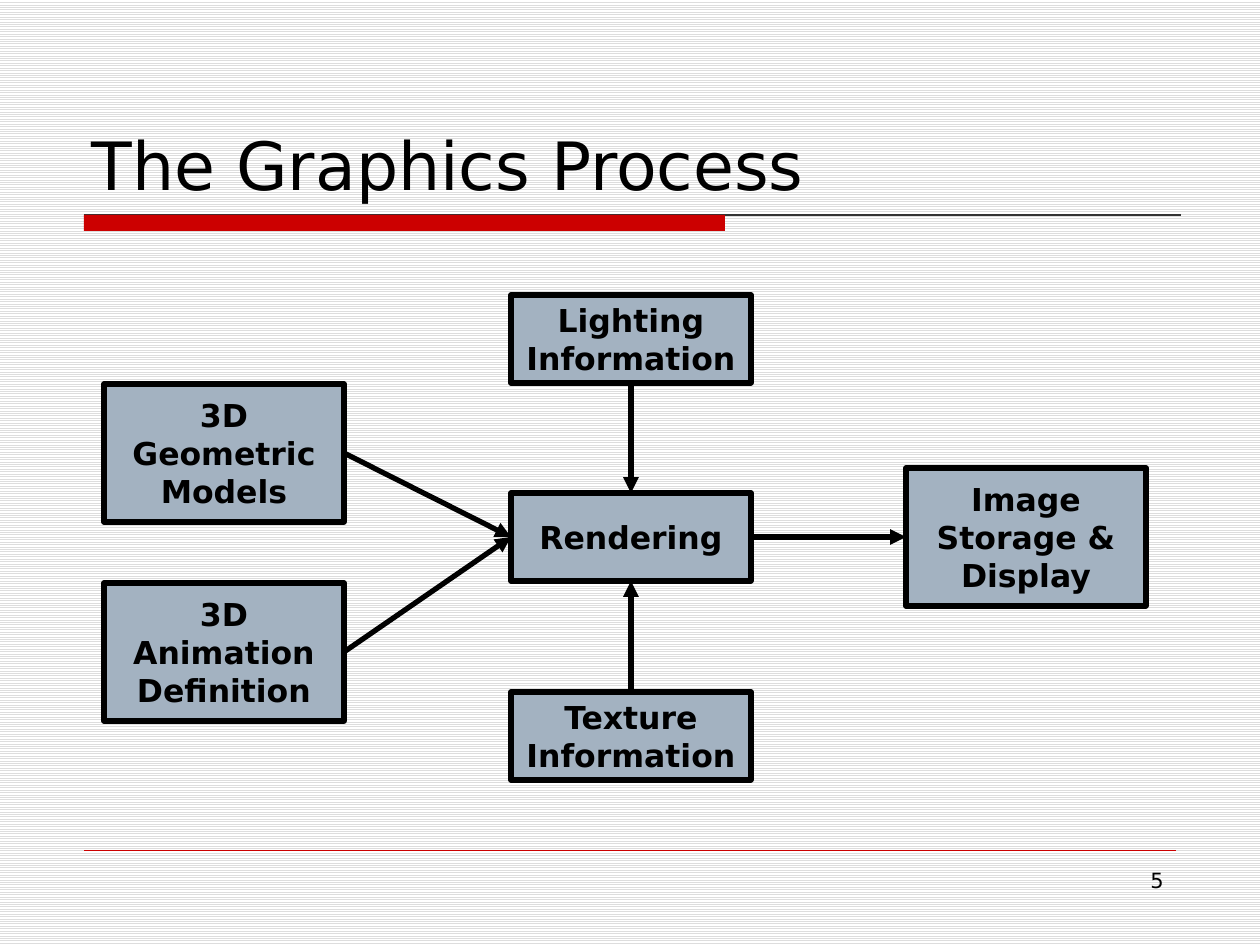
from dataclasses import dataclass

from lxml.etree import SubElement
from pptx import Presentation
from pptx.dml.color import RGBColor
from pptx.enum.dml import MSO_PATTERN
from pptx.enum.shapes import MSO_CONNECTOR, MSO_SHAPE
from pptx.enum.text import MSO_ANCHOR, PP_ALIGN
from pptx.oxml.ns import qn
from pptx.shapes.autoshape import Shape
from pptx.shapes.connector import Connector
from pptx.slide import Slide
from pptx.text.text import TextFrame
from pptx.util import Emu, Pt

PX = 914400 / 126  # EMU per px
FONT = "DejaVu Sans"
COLORS = {
    "ink": "000000",
    "box": "A3B2C1",
    "accent": "CC0000",
    "rule": "333333",
    "stripe": "DDDDDD",
    "paper": "FFFFFF",
}
TOP, LEFT, BOTTOM, RIGHT = range(4)  # connection sites of a rectangle
BOX_WIDTH = 240


@dataclass
class Stage:
    label: str
    left: int
    top: int
    height: int


@dataclass
class Flow:
    source: str
    source_side: int
    target_side: int


# "\n" starts a paragraph, "\v" breaks a line within one
STAGES = {
    "lighting": Stage("Lighting\nInformation", 511, 295, 88),
    "texture": Stage("Texture\nInformation", 511, 692, 88),
    "rendering": Stage("Rendering", 511, 493, 88),
    "output": Stage("Image\vStorage &\vDisplay", 906, 468, 138),
    "models": Stage("3D\vGeometric\vModels", 104, 384, 138),
    "animation": Stage("3D\vAnimation\vDefinition", 104, 583, 138),
}
INPUTS = [
    Flow("lighting", BOTTOM, TOP),
    Flow("texture", TOP, BOTTOM),
    Flow("models", RIGHT, LEFT),
    Flow("animation", RIGHT, LEFT),
]


def px(value: int) -> Emu:
    return Emu(round(value * PX))


def color(name: str) -> RGBColor:
    return RGBColor.from_string(COLORS[name])


def format_text(frame: TextFrame, size: int, align: PP_ALIGN, bold: bool = False) -> None:
    for paragraph in frame.paragraphs:
        paragraph.alignment = align
        paragraph.font.name = FONT
        paragraph.font.size = Pt(size)
        paragraph.font.bold = bold
        paragraph.font.color.rgb = color("ink")


def add_rect(slide: Slide, left: int, top: int, width: int, height: int, fill: str) -> Shape:
    rect = slide.shapes.add_shape(
        MSO_SHAPE.RECTANGLE, px(left), px(top), px(width), px(height)
    )
    rect.shadow.inherit = False
    rect.fill.solid()
    rect.fill.fore_color.rgb = color(fill)
    return rect


def add_line(
    slide: Slide, x1: int, y1: int, x2: int, y2: int, ink: str, weight: float
) -> Connector:
    line = slide.shapes.add_connector(
        MSO_CONNECTOR.STRAIGHT, px(x1), px(y1), px(x2), px(y2)
    )
    line.line.color.rgb = color(ink)
    line.line.width = Pt(weight)
    SubElement(line._element.spPr, qn("a:effectLst"))
    return line


def add_stage(slide: Slide, stage: Stage) -> Shape:
    box = add_rect(slide, stage.left, stage.top, BOX_WIDTH, stage.height, "box")
    box.line.color.rgb = color("ink")
    box.line.width = Pt(3)
    frame = box.text_frame
    frame.text = stage.label
    frame.word_wrap = False
    frame.vertical_anchor = MSO_ANCHOR.MIDDLE
    format_text(frame, 18, PP_ALIGN.CENTER, bold=True)
    return box


def add_arrow(slide: Slide, source: Shape, source_side: int, target: Shape, target_side: int) -> None:
    arrow = add_line(slide, 0, 0, 0, 0, "ink", 3)
    arrow.begin_connect(source, source_side)
    arrow.end_connect(target, target_side)
    SubElement(arrow.line._get_or_add_ln(), qn("a:tailEnd"), type="triangle")


def main() -> None:
    deck = Presentation()
    deck.slide_width, deck.slide_height = px(1260), px(945)
    slide = deck.slides.add_slide(deck.slide_layouts[5])

    # Striped background
    background = slide.background.fill
    background.patterned()
    background.pattern = MSO_PATTERN.LIGHT_HORIZONTAL
    background.fore_color.rgb = color("stripe")
    background.back_color.rgb = color("paper")

    # Title with its bar and rule, and the footer rule
    title = slide.shapes.title
    title.left, title.top, title.width, title.height = px(79), px(42), px(1102), px(168)
    title.text_frame.text = "The Graphics Process"
    title.text_frame.vertical_anchor = MSO_ANCHOR.BOTTOM
    format_text(title.text_frame, 38, PP_ALIGN.LEFT)
    add_line(slide, 84, 215, 1181, 215, "rule", 0.75)
    add_rect(slide, 84, 215, 641, 16, "accent").line.fill.background()
    add_line(slide, 84, 850, 1176, 850, "accent", 0.25)

    # Stages and the flow between them
    boxes = {key: add_stage(slide, stage) for key, stage in STAGES.items()}
    rendering = boxes["rendering"]
    for flow in INPUTS:
        add_arrow(slide, boxes[flow.source], flow.source_side, rendering, flow.target_side)
    add_arrow(slide, rendering, RIGHT, boxes["output"], LEFT)

    # Page number
    page_number = slide.shapes.add_textbox(px(903), px(861), px(273), px(66)).text_frame
    page_number.word_wrap = True
    page_number.text = "5"
    format_text(page_number, 12, PP_ALIGN.RIGHT)

    deck.save("out.pptx")


if __name__ == "__main__":
    main()
